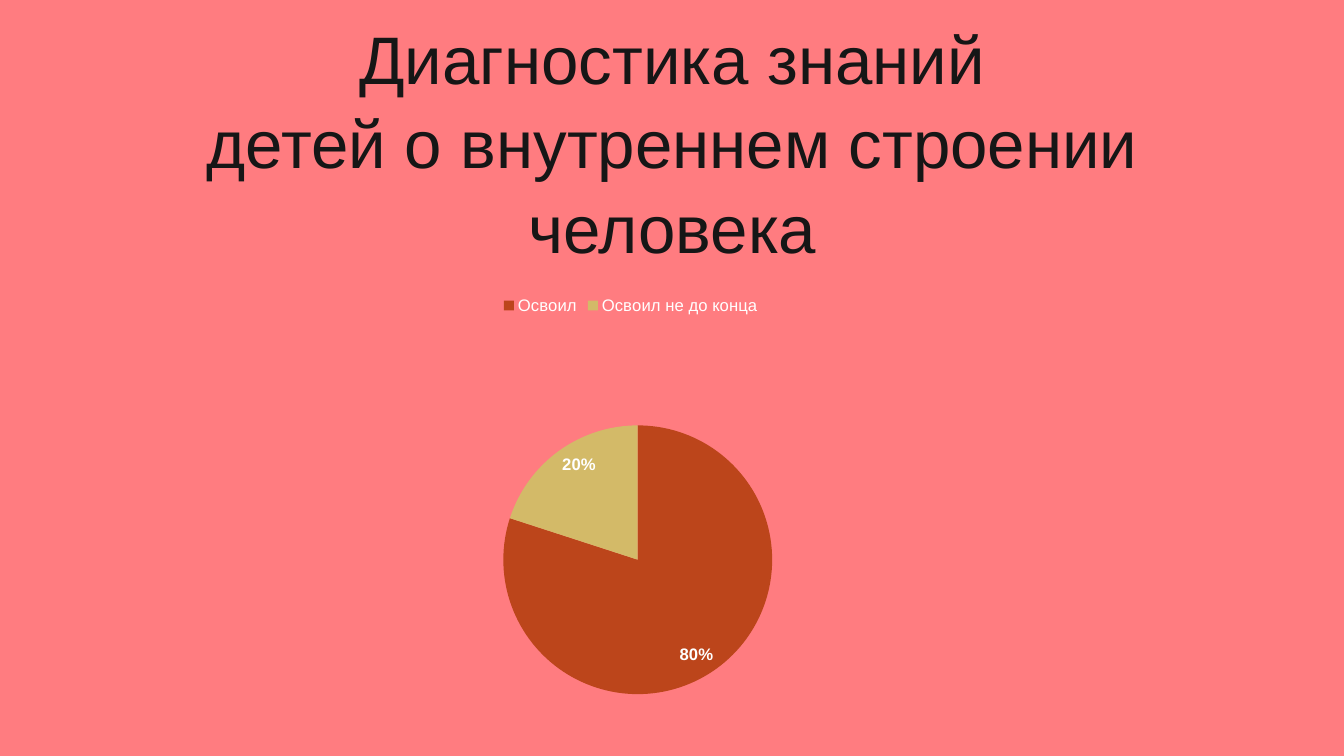
"""Build a slide with a title and a pie chart of children's diagnostic results."""
from typing import NamedTuple

from lxml.etree import SubElement
from pptx import Presentation
from pptx.chart.data import CategoryChartData
from pptx.dml.color import RGBColor
from pptx.enum.chart import XL_CHART_TYPE, XL_LABEL_POSITION, XL_LEGEND_POSITION
from pptx.enum.text import MSO_ANCHOR, PP_ALIGN
from pptx.oxml.ns import qn
from pptx.util import Inches, Pt

SLIDE_WIDTH, SLIDE_HEIGHT = Inches(13.33), Inches(7.5)
FONT = "Arial"
BACKGROUND = RGBColor(0xFF, 0x7C, 0x80)
INK = RGBColor(0x16, 0x16, 0x16)
WHITE = RGBColor(0xFF, 0xFF, 0xFF)
RUST = RGBColor(0xBC, 0x45, 0x1B)
SAND = RGBColor(0xD3, 0xBA, 0x68)


class Area(NamedTuple):
    """Left, top, width and height as shares of the whole."""
    left: float
    top: float
    width: float
    height: float

    def on_slide(self):
        return (int(self.left * SLIDE_WIDTH), int(self.top * SLIDE_HEIGHT),
                int(self.width * SLIDE_WIDTH), int(self.height * SLIDE_HEIGHT))


class Sector(NamedTuple):
    """One sector of the pie."""
    name: str
    percent: int
    color: RGBColor


TITLE_AREA = Area(0.0345, 0.0173, 0.9317, 0.336)
CHART_AREA = Area(0.2596, 0.3773, 0.4194, 0.5413)
PIE_AREA = Area(0.274, 0.342, 0.477, 0.658)
TITLE = ["Диагностика знаний", "детей о внутреннем строении человека"]
SECTORS = [Sector("Освоил", 80, RUST), Sector("Освоил не до конца", 20, SAND)]


def style_font(font, *, size: float, color: RGBColor, bold: bool = False) -> None:
    font.name, font.size, font.bold = FONT, Pt(size), bold
    font.color.rgb = color


def add_text(slide, lines: list[str], area: Area, *, size: float,
             color: RGBColor, line_spacing: float) -> None:
    frame = slide.shapes.add_textbox(*area.on_slide()).text_frame
    frame.word_wrap = True
    frame.vertical_anchor = MSO_ANCHOR.MIDDLE
    frame.text = "\n".join(lines)
    for paragraph in frame.paragraphs:
        paragraph.alignment = PP_ALIGN.CENTER
        paragraph.line_spacing = line_spacing
        style_font(paragraph.runs[0].font, size=size, color=color)


def place_plot(chart, area: Area) -> None:
    plot_area = chart.plots[0]._element.getparent()
    layout = plot_area.find(qn("c:layout"))
    if layout is None:
        layout = SubElement(plot_area, qn("c:layout"))
        plot_area.insert(0, layout)
    manual = SubElement(layout, qn("c:manualLayout"))
    settings = [("layoutTarget", "inner"), ("xMode", "edge"), ("yMode", "edge"),
                *zip("xywh", area)]
    for tag, value in settings:
        SubElement(manual, qn(f"c:{tag}")).set("val", str(value))


def add_pie(slide, sectors: list[Sector], area: Area) -> None:
    data = CategoryChartData()
    data.categories = [sector.name for sector in sectors]
    data.add_series("Series 1", [sector.percent for sector in sectors])
    chart = slide.shapes.add_chart(XL_CHART_TYPE.PIE, *area.on_slide(), data).chart
    style_font(chart.font, size=10, color=WHITE)
    chart.has_title = False
    chart.has_legend = True
    chart.legend.position = XL_LEGEND_POSITION.TOP
    chart.legend.include_in_layout = False
    style_font(chart.legend.font, size=11.9, color=WHITE)
    plot = chart.plots[0]
    plot.vary_by_categories = True
    for index, sector in enumerate(sectors):
        fill = plot.series[0].points[index].format.fill
        fill.solid()
        fill.fore_color.rgb = sector.color
    plot.has_data_labels = True
    labels = plot.data_labels
    labels.show_percentage, labels.show_value = True, False
    labels.number_format, labels.number_format_is_linked = "0%", False
    labels.position = XL_LABEL_POSITION.INSIDE_END
    style_font(labels.font, size=11.9, color=WHITE, bold=True)
    place_plot(chart, PIE_AREA)


def main() -> None:
    presentation = Presentation()
    presentation.slide_width, presentation.slide_height = SLIDE_WIDTH, SLIDE_HEIGHT
    slide = presentation.slides.add_slide(presentation.slide_layouts[6])
    slide.background.fill.solid()
    slide.background.fill.fore_color.rgb = BACKGROUND
    add_text(slide, TITLE, TITLE_AREA, size=48, color=INK, line_spacing=1.05)
    add_pie(slide, SECTORS, CHART_AREA)
    presentation.save("out.pptx")


if __name__ == "__main__":
    main()
